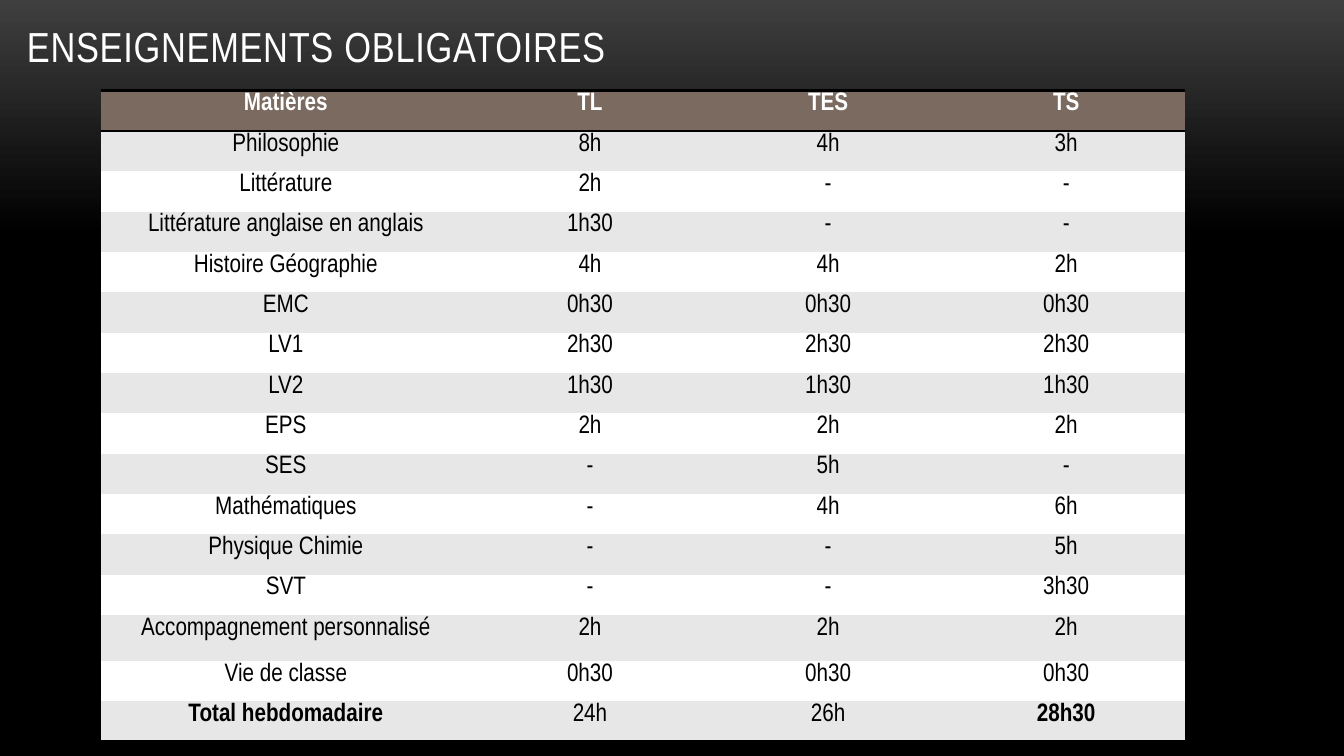
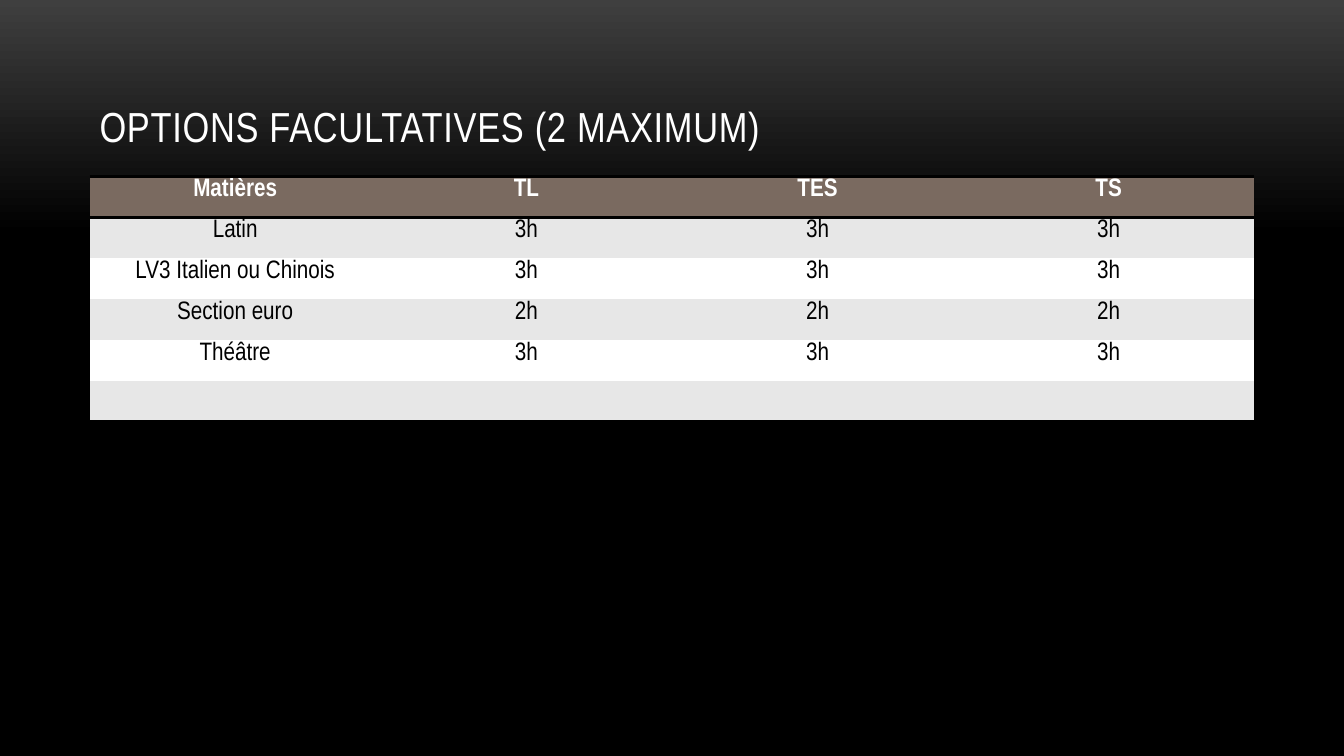
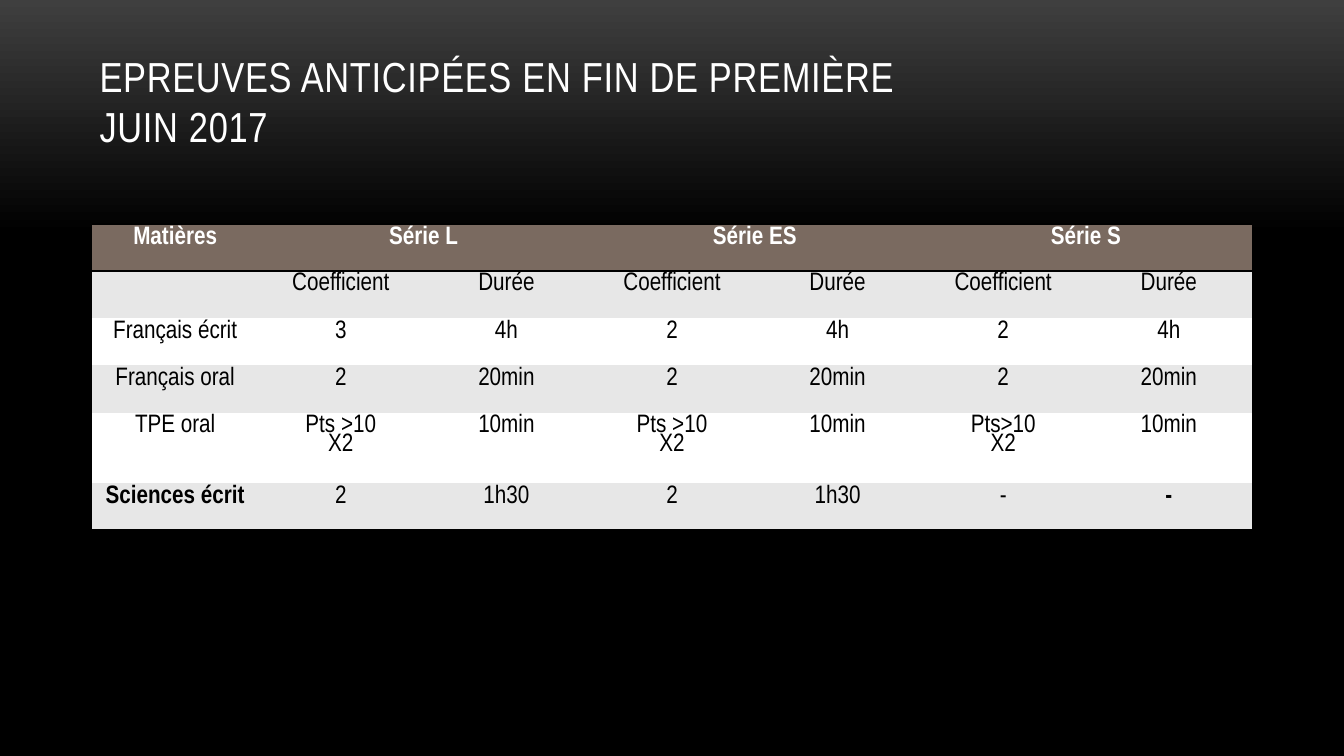
import pptx
import pptx.util
import pptx.dml.color
import pptx.enum.text
import pptx.oxml.ns
import lxml.etree

Pt = pptx.util.Pt
RGB = pptx.dml.color.RGBColor
ALIGN = pptx.enum.text.PP_ALIGN
ANCHOR = pptx.enum.text.MSO_ANCHOR
qn = pptx.oxml.ns.qn

FONT = "Arial Narrow"
BLACK = RGB(0x00, 0x00, 0x00)
WHITE = RGB(0xFF, 0xFF, 0xFF)
SMOKE = RGB(0x3F, 0x3F, 0x3F)
BROWN = RGB(0x7A, 0x6A, 0x60)
GREY = RGB(0xE7, 0xE7, 0xE7)
PLAIN = "{2D5ABB26-0587-4C30-8999-92F81FD0307C}"  # table style without grid

HOURS = """Matières|TL|TES|TS
Philosophie|8h|4h|3h
Littérature|2h|-|-
Littérature anglaise en anglais|1h30|-|-
Histoire Géographie|4h|4h|2h
EMC|0h30|0h30|0h30
LV1|2h30|2h30|2h30
LV2|1h30|1h30|1h30
EPS|2h|2h|2h
SES|-|5h|-
Mathématiques|-|4h|6h
Physique Chimie|-|-|5h
SVT|-|-|3h30
Accompagnement personnalisé|2h|2h|2h
Vie de classe|0h30|0h30|0h30
Total hebdomadaire|24h|26h|28h30"""

OPTIONS = """Matières|TL|TES|TS
Latin|3h|3h|3h
LV3 Italien ou Chinois|3h|3h|3h
Section euro|2h|2h|2h
Théâtre|3h|3h|3h
|||"""

EXAMS = """Matières|Série L||Série ES||Série S|
|Coefficient|Durée|Coefficient|Durée|Coefficient|Durée
Français écrit|3|4h|2|4h|2|4h
Français oral|2|20min|2|20min|2|20min
TPE oral|Pts >10/X2|10min|Pts >10/X2|10min|Pts>10/X2|10min
Sciences écrit|2|1h30|2|1h30|-|-"""


def add_run(para, text, size, color, bold=False):
    run = para.add_run()
    run.text = text
    run.font.name = FONT
    run.font.size = Pt(size)
    run.font.bold = bold
    run.font.color.rgb = color
    return run


def paint_back(master):
    """Give every slide the dark gradient, from the top down."""
    fill = master.background.fill
    fill.gradient()
    fill.gradient_angle = 270
    for stop, color, place in zip(fill.gradient_stops, (SMOKE, BLACK), (0, 0.31)):
        stop.color.rgb = color
        stop.position = place


def add_title(slide, box, text):
    frame = slide.shapes.add_textbox(*map(Pt, box)).text_frame
    frame.word_wrap = True
    frame.vertical_anchor = ANCHOR.BOTTOM
    para = frame.paragraphs[0]
    for i, line in enumerate(text.split("\n")):
        if i:
            para.add_line_break()
        run = add_run(para, line, 30, WHITE)
        run.font._element.set("spc", "50")


def add_edge(cell, tag):
    props = cell._tc.get_or_add_tcPr()
    line = lxml.etree.SubElement(props, qn(tag), w=str(Pt(2)))
    solid = lxml.etree.SubElement(line, qn("a:solidFill"))
    lxml.etree.SubElement(solid, qn("a:srgbClr"), val=str(BLACK))


def fill_cell(cell, text, back, color, bold):
    cell.fill.solid()
    cell.fill.fore_color.rgb = back
    frame = cell.text_frame
    for i, line in enumerate(text.split("/")):
        para = frame.add_paragraph() if i else frame.paragraphs[0]
        para.alignment = ALIGN.CENTER
        para.line_spacing = 0.8
        if line:
            add_run(para, line, 18, color, bold)


def add_grid(slide, left, top, cols, rows, text, bold=(), pairs=()):
    """Draw a banded table; bold lists columns of the last row,
    pairs lists header columns merged with the next one."""
    data = [line.split("|") for line in text.split("\n")]
    last = len(rows) - 1
    shape = slide.shapes.add_table(len(rows), len(cols), Pt(left), Pt(top),
                                   Pt(sum(cols)), Pt(sum(rows)))
    table = shape.table
    table._tbl.tblPr.find(qn("a:tableStyleId")).text = PLAIN
    for col, width in zip(table.columns, cols):
        col.width = Pt(width)
    for r, (row, height) in enumerate(zip(table.rows, rows)):
        row.height = Pt(height)
        head = r == 0
        back = BROWN if head else GREY if r % 2 else WHITE
        for c, cell in enumerate(row.cells):
            if head:
                add_edge(cell, "a:lnT")
            if r in (0, last):
                add_edge(cell, "a:lnB")
            fill_cell(cell, data[r][c], back, WHITE if head else BLACK,
                      head or (r == last and c in bold))
    for c in pairs:
        table.cell(0, c).merge(table.cell(0, c + 1))


def main():
    deck = pptx.Presentation()
    deck.slide_width, deck.slide_height = Pt(960), Pt(540)
    paint_back(deck.slide_master)
    hours, options, exams = (deck.slides.add_slide(deck.slide_layouts[6])
                             for _ in range(3))
    head = (64, 21.6, 832, 90)

    add_grid(hours, 72, 64.8, [264.4] + [170.1] * 3,
             [28.8] * 13 + [33] + [28.8] * 2, HOURS, bold=(0, 3))
    add_title(hours, (12.2, 0, 533.5, 54), "ENSEIGNEMENTS OBLIGATOIRES")

    add_title(options, head, "OPTIONS FACULTATIVES (2 MAXIMUM)")
    add_grid(options, 64, 126, [208] * 4, [29.2] * 6, OPTIONS)

    add_title(exams, head, "EPREUVES ANTICIPÉES EN FIN DE PREMIÈRE\nJUIN 2017")
    add_grid(exams, 66, 160, [118.3] * 7, [33.4] + [33.8] * 3 + [50.5, 33.8],
             EXAMS, bold=(0, 6), pairs=(1, 3, 5))

    deck.save("out.pptx")


if __name__ == "__main__":
    main()
